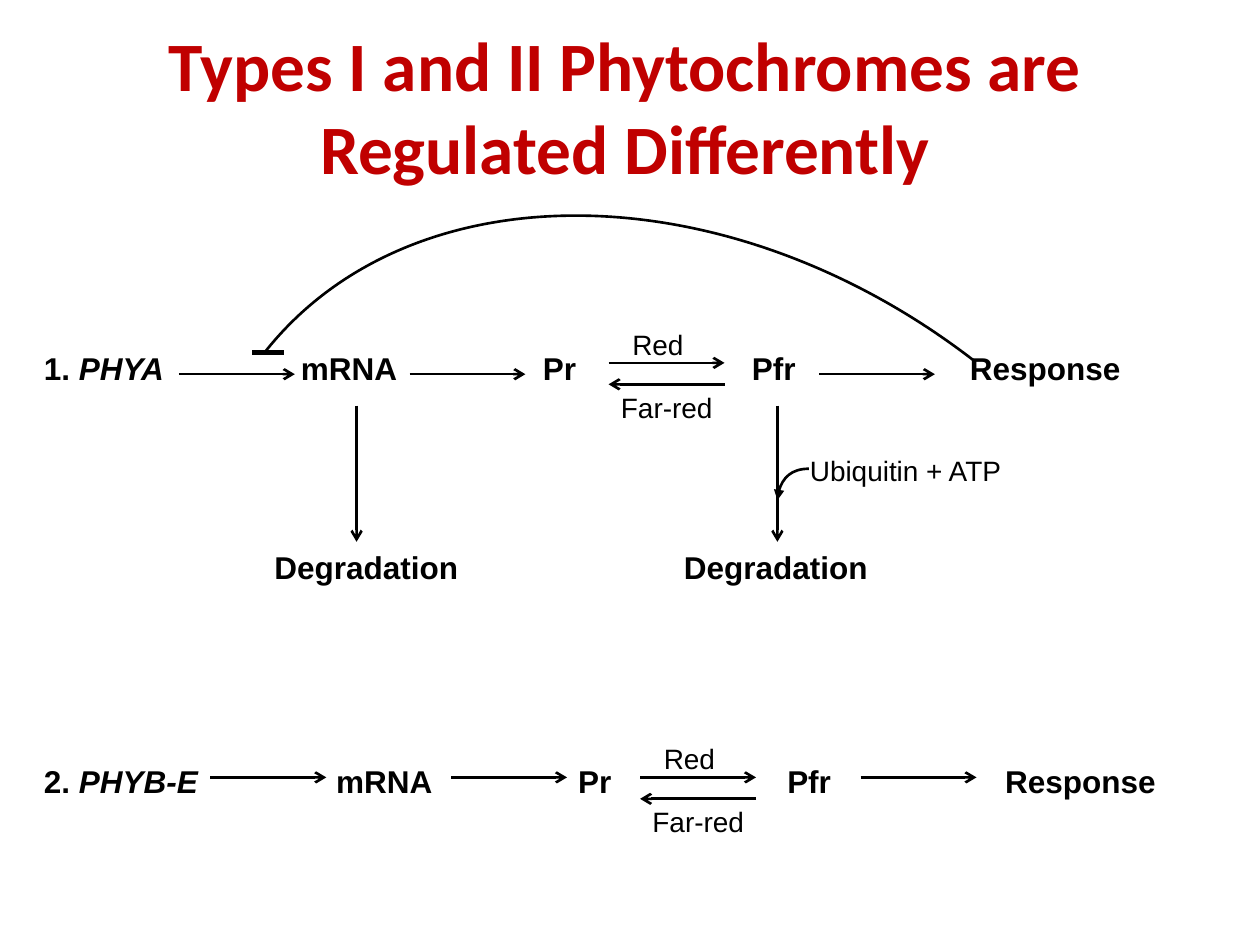
from lxml import etree
from pptx import Presentation
from pptx.dml.color import RGBColor
from pptx.enum.shapes import MSO_CONNECTOR
from pptx.enum.text import MSO_ANCHOR, PP_ALIGN
from pptx.oxml.ns import qn
from pptx.util import Inches, Pt

STRAIGHT = MSO_CONNECTOR.STRAIGHT
MIDDLE = MSO_ANCHOR.MIDDLE
CENTER = PP_ALIGN.CENTER

BLACK = RGBColor(0x00, 0x00, 0x00)
TITLE_RED = RGBColor(0xC0, 0x00, 0x00)

STAGES = ["mRNA", "Pr", "Pfr", "Response"]
STAGE_TABS = [2.04, 3.96, 5.62, 7.35]
ARROW_LENGTH = 0.92


def add_text(slide, text, left, top, width, height=0.37, size=16, bold=False,
             font="Arial", color=BLACK):
    shape = slide.shapes.add_textbox(Inches(left), Inches(top), Inches(width), Inches(height))
    shape.text_frame.word_wrap = True
    paragraph = shape.text_frame.paragraphs[0]
    paragraph.text = text
    paragraph.font.size = Pt(size)
    paragraph.font.bold = bold
    for run in paragraph.runs:
        format_run(run, size, bold, font, color)
    return shape


def format_run(run, size, bold, font, color):
    run.font.size = Pt(size)
    run.font.bold = bold
    run.font.name = font
    run.font.color.rgb = color


def add_title(slide, text):
    title = add_text(slide, text, 0.25, 0.25, 9.42, 1.17, 39.6, True, "Calibri", TITLE_RED)
    title.text_frame.vertical_anchor = MIDDLE
    title.text_frame.paragraphs[0].alignment = CENTER


def add_pathway_text(slide, number, gene, top, shift):
    """Write one pathway as a line of text whose stages sit on tab stops."""
    shape = add_text(slide, f"{number}. ", 0.25, top, 9.5, 0.4, 18, True)
    paragraph = shape.text_frame.paragraphs[0]
    for text, italic in [(gene, True), ("\t" + "\t".join(STAGES), False)]:
        run = paragraph.add_run()
        run.text = text
        format_run(run, 18, True, "Arial", BLACK)
        run.font.italic = italic
    properties = paragraph.runs[0].font.size and paragraph._p.get_or_add_pPr()
    tabs = etree.Element(qn("a:tabLst"))
    for position in STAGE_TABS:
        etree.SubElement(tabs, qn("a:tab"), pos=str(Inches(position + shift)), algn="l")
    default_run = properties.find(qn("a:defRPr"))
    default_run.addprevious(tabs)


def style_line(shape, width, arrowhead):
    shape.line.color.rgb = BLACK
    shape.line.width = Pt(width)
    if arrowhead:
        etree.SubElement(shape.line._get_or_add_ln(), qn("a:tailEnd"), type=arrowhead)


def add_line(slide, start, end, width=1.5, arrowhead="arrow"):
    points = [Inches(value) for value in (*start, *end)]
    line = slide.shapes.add_connector(STRAIGHT, *points)
    style_line(line, width, arrowhead)
    etree.SubElement(line._element.spPr, qn("a:effectLst"))


def add_curve(slide, start, controls, end, arrowhead=None):
    """Draw a cubic curve by merging the segments of a freeform into one."""
    points = [(Inches(x), Inches(y)) for x, y in (*controls, end)]
    builder = slide.shapes.build_freeform(Inches(start[0]), Inches(start[1]))
    builder.add_line_segments(points, close=False)
    curve = builder.convert_to_shape()
    outline = curve._element.spPr.find(".//" + qn("a:path"))
    bezier = etree.SubElement(outline, qn("a:cubicBezTo"))
    for segment in outline.findall(qn("a:lnTo")):
        bezier.append(segment[0])
        outline.remove(segment)
    curve.fill.background()
    curve.shadow.inherit = False
    style_line(curve, 1.5, arrowhead)


def add_step_arrows(slide, lefts, y):
    for left in lefts:
        add_line(slide, (left, y), (left + ARROW_LENGTH, y))


def add_light_exchange(slide, left, y):
    """Draw the red and far-red arrows between Pr and Pfr."""
    right = left + ARROW_LENGTH
    add_line(slide, (left, y), (right, y))
    add_line(slide, (right, y + 0.17), (left, y + 0.17))
    add_text(slide, "Red", left + 0.09, y - 0.33, 1.08)
    add_text(slide, "Far-red", left, y + 0.17, 1.08)


def add_degradation(slide, arrow_x, label_left):
    add_line(slide, (arrow_x, 3.22), (arrow_x, 4.3))
    add_text(slide, "Degradation", label_left, 4.3, 2.5, 0.4, 18, True)


def add_feedback(slide):
    add_curve(slide, (7.74, 2.87), [(5.78, 1.35), (3.25, 1.32)], (2.09, 2.81))
    add_line(slide, (2, 2.8), (2.25, 2.8), width=3, arrowhead=None)


def main():
    presentation = Presentation()
    presentation.slide_width = Inches(10)
    presentation.slide_height = Inches(7.5)
    slide = presentation.slides.add_slide(presentation.slide_layouts[6])

    add_title(slide, "Types I and II Phytochromes are Regulated Differently")

    add_pathway_text(slide, 1, "PHYA", 2.72, 0)
    add_step_arrows(slide, [1.42, 3.25, 6.5], 2.97)
    add_light_exchange(slide, 4.83, 2.88)
    add_degradation(slide, 2.83, 2.08)
    add_degradation(slide, 6.17, 5.33)
    add_text(slide, "Ubiquitin + ATP", 6.33, 3.55, 2.5)
    add_curve(slide, (6.42, 3.72), [(6.28, 3.72), (6.17, 3.83)], (6.17, 3.97), "triangle")
    add_feedback(slide)

    add_pathway_text(slide, 2, "PHYB-E", 6, 0.28)
    add_step_arrows(slide, [1.67, 3.58, 6.83], 6.17)
    add_light_exchange(slide, 5.08, 6.17)

    presentation.save("out.pptx")


if __name__ == "__main__":
    main()
